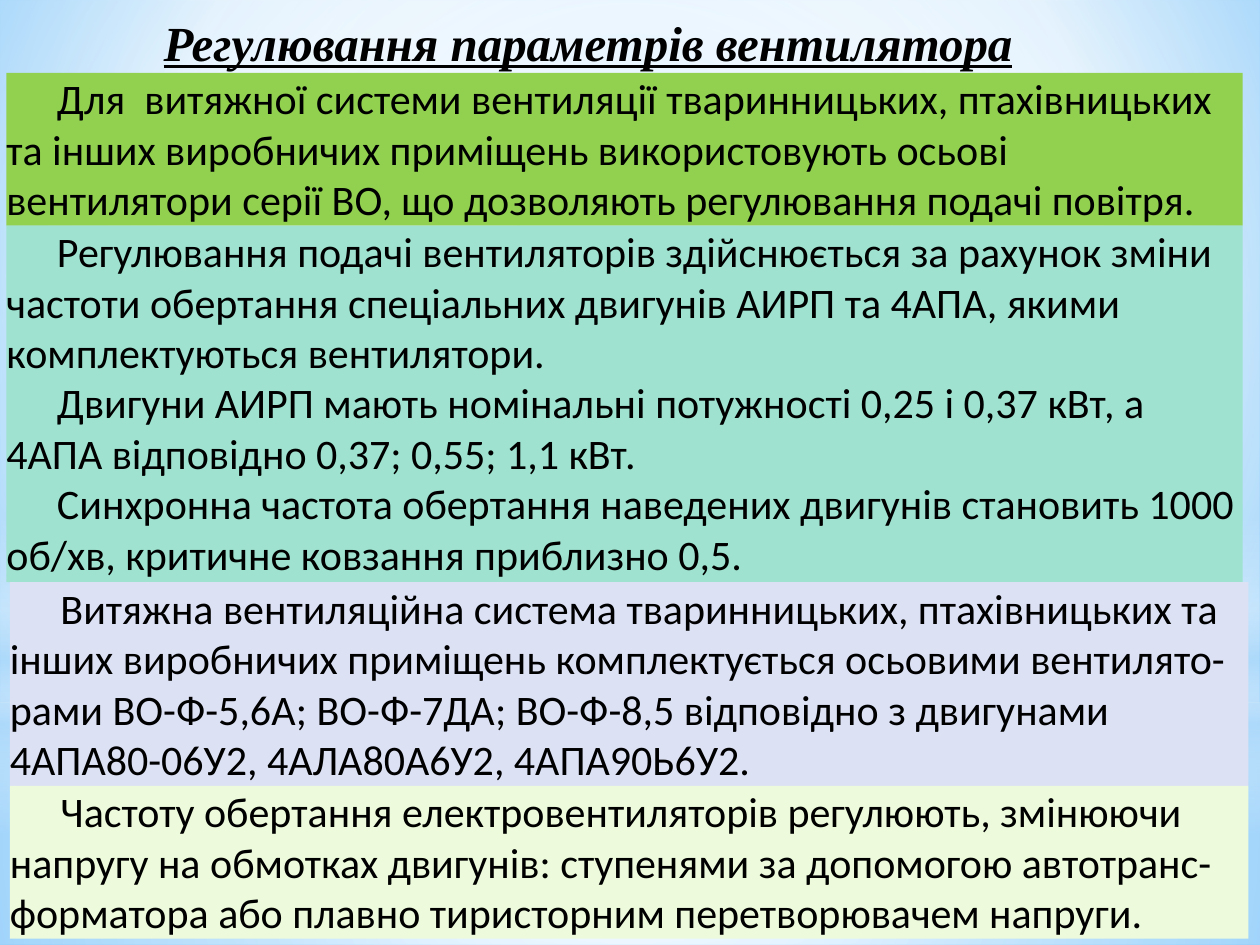
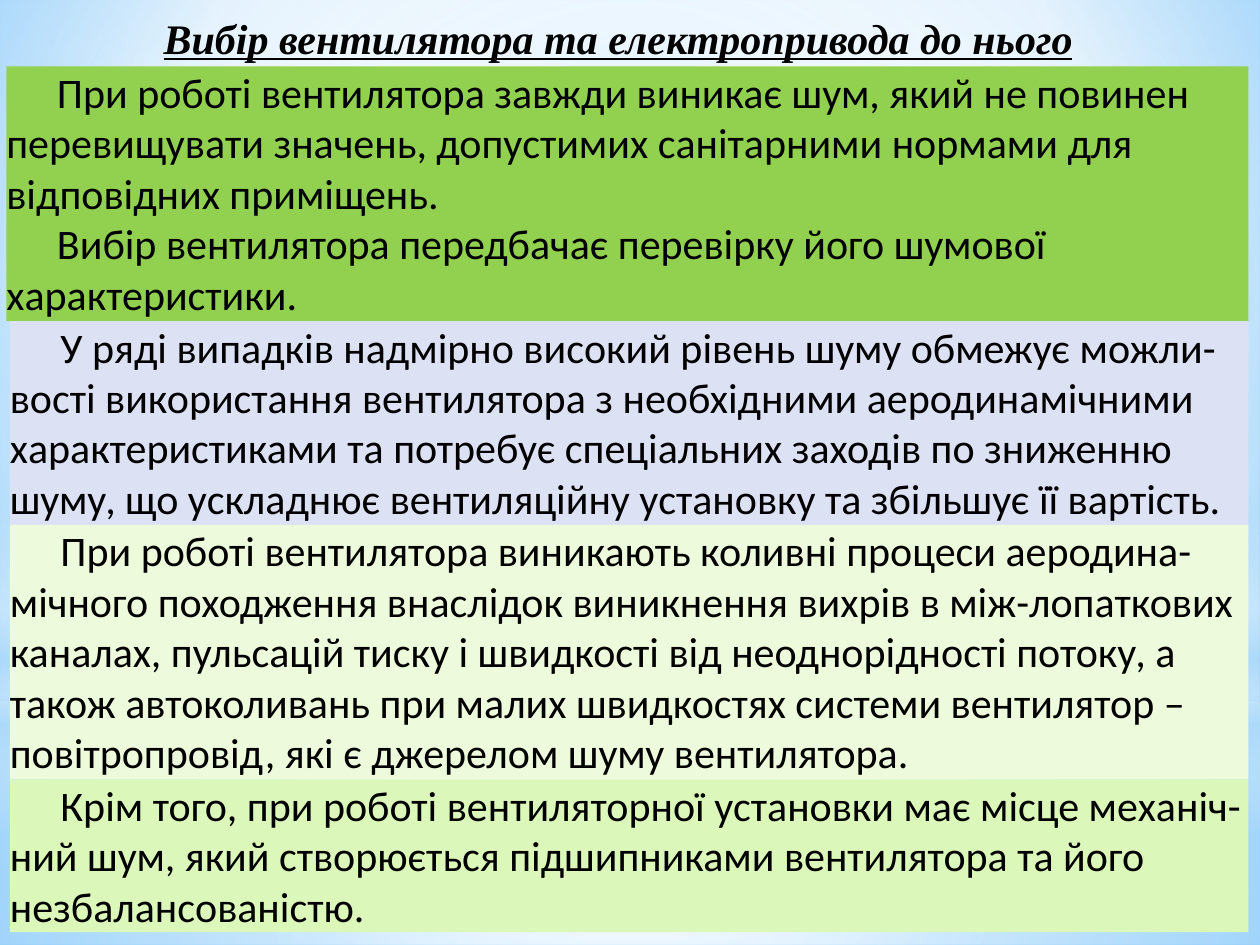
from lxml import etree
from pptx import Presentation
from pptx.dml.color import RGBColor
from pptx.enum import shapes, text
from pptx.oxml import ns
from pptx.util import Cm, Pt

WIDE, HIGH = Cm(25.4), Cm(19.05)
BLACK = RGBColor(0x00, 0x00, 0x00)
WHITE = RGBColor(0xFF, 0xFF, 0xFF)
SKY = RGBColor(0xB4, 0xDC, 0xFA)
AZURE = RGBColor(0x9E, 0xD5, 0xFF)
BLUE = RGBColor(0x5B, 0xB9, 0xFF)
GREEN = RGBColor(0x92, 0xD0, 0x50)
MINT = RGBColor(0x9E, 0xE2, 0xCF)
LILAC = RGBColor(0xDC, 0xE1, 0xF4)
CREAM = RGBColor(0xED, 0xFB, 0xDC)
LIME = RGBColor(0xDC, 0xF7, 0xBA)

# Block edges, first-line indent and the height of three text lines
NEAR, FAR = Cm(0.13), Cm(0.2)
INNER, OUTER = Cm(25.05), Cm(25.17)
INDENT = Cm(1.02)
THREE = Cm(3.08)

CENTER = (50, 50, 50, 50)


def blend(owner, stops, focus=None):
    """Replace a solid fill by a gradient of (place, colour, opacity)."""
    grad = etree.Element(ns.qn("a:gradFill"), rotWithShape="1")
    row = etree.SubElement(grad, ns.qn("a:gsLst"))
    for place, color, alpha in stops:
        stop = etree.SubElement(row, ns.qn("a:gs"), pos=str(place * 1000))
        tint = etree.SubElement(stop, ns.qn("a:srgbClr"), val=str(color))
        if alpha < 100:
            etree.SubElement(tint, ns.qn("a:alpha"), val=str(alpha * 1000))
    if focus:
        way = etree.SubElement(grad, ns.qn("a:path"))
        way.set("path", "circle")
        rect = etree.SubElement(way, ns.qn("a:fillToRect"))
        for side, share in zip("ltrb", focus):
            rect.set(side, str(share * 1000))
    else:
        etree.SubElement(grad, ns.qn("a:lin"), ang="5400000", scaled="0")
    old = owner.element.xpath(".//p:bgPr/a:solidFill | ./p:spPr/a:solidFill")[0]
    old.getparent().replace(old, grad)


def add_box(slide, kind, left, top, width, height, color):
    box = slide.shapes.add_shape(kind, left, top, width, height)
    box.shadow.inherit = False
    box.fill.solid()
    box.fill.fore_color.rgb = color
    box.line.fill.background()
    return box


def dress(layout, slide):
    """Give the layout its sky backdrop, using the slide to draw the glows."""
    for item in list(layout.placeholders):
        item.element.getparent().remove(item.element)
    layout.background.fill.solid()
    layout.background.fill.fore_color.rgb = WHITE
    blend(layout, [(0, AZURE, 100), (60, WHITE, 100), (100, BLUE, 100)],
          (20, 10, 20, 60))

    rect, oval = shapes.MSO_SHAPE.RECTANGLE, shapes.MSO_SHAPE.OVAL
    split = Cm(14.17)
    glows = [
        (rect, split, HIGH - split,
         [(0, WHITE, 91), (37, WHITE, 76), (100, SKY, 79)], CENTER),
        (rect, 0, split,
         [(0, WHITE, 89), (48, WHITE, 62), (100, SKY, 79)], CENTER),
        (rect, Cm(10.46), Cm(6.35),
         [(0, WHITE, 0), (29, WHITE, 30), (45, SKY, 40),
          (55, WHITE, 26), (65, SKY, 60), (100, WHITE, 0)], None),
        (oval, Cm(4.45), split,
         [(0, WHITE, 100), (56, WHITE, 0)], CENTER),
    ]
    for kind, top, height, stops, focus in glows:
        glow = add_box(slide, kind, 0, top, WIDE, height, WHITE)
        blend(glow, stops, focus)
        layout.shapes.element.append(glow.element)


def trim(frame, wrap):
    frame.margin_left = frame.margin_right = 0
    frame.margin_top = frame.margin_bottom = 0
    frame.word_wrap = wrap
    frame.auto_size = text.MSO_AUTO_SIZE.SHAPE_TO_FIT_TEXT


def style(para, name, size):
    para.font.name = name
    para.font.size = Pt(size)
    para.font.color.rgb = BLACK


def add_title(slide, words, size, width, height):
    box = slide.shapes.add_textbox(Cm(3.3), Cm(0.25), width, height)
    trim(box.text_frame, False)
    para = box.text_frame.paragraphs[0]
    para.text = words
    style(para, "Times New Roman", size)
    para.font.bold = para.font.italic = para.font.underline = True


def add_block(slide, left, right, top, lines, color, paras):
    """Draw a coloured text block and return its lower edge."""
    height = THREE * lines // 3
    box = add_box(slide, shapes.MSO_SHAPE.RECTANGLE,
                  left, top, right - left, height, color)
    frame = box.text_frame
    trim(frame, True)
    frame.vertical_anchor = text.MSO_ANCHOR.TOP
    frame.text = "\n".join(paras)
    for para in frame.paragraphs:
        para.alignment = text.PP_ALIGN.LEFT
        style(para, "Calibri", 24)
        props = para._p.get_or_add_pPr()
        props.set("marL", "0")
        props.set("indent", str(INDENT))
    return top + height


def add_stack(slide, top, blocks):
    for left, right, lines, color, paras in blocks:
        top = add_block(slide, left, right, top, lines, color, paras)


CONTROL = [
    (NEAR, INNER, 3, GREEN, [
        "Для  витяжної системи вентиляції тваринницьких, птахівницьких та "
        "інших виробничих приміщень використовують осьові вентилятори серії "
        "ВО, що дозволяють регулювання подачі повітря."]),
    (NEAR, INNER, 7, MINT, [
        "Регулювання подачі вентиляторів здійснюється за рахунок зміни "
        "частоти обертання спеціальних двигунів АИРП та 4АПА, якими "
        "комплектуються вентилятори.",
        "Двигуни АИРП мають номінальні потужності 0,25 і 0,37 кВт, а 4АПА "
        "відповідно 0,37; 0,55; 1,1 кВт.",
        "Синхронна частота обертання наведених двигунів становить 1000 "
        "об/хв, критичне ковзання приблизно 0,5."]),
    (FAR, OUTER, 4, LILAC, [
        "Витяжна вентиляційна система тваринницьких, птахівницьких та інших "
        "виробничих приміщень комплектується осьовими вентилято-рами "
        "ВО-Ф-5,6А; ВО-Ф-7ДА; ВО-Ф-8,5 відповідно з двигунами 4АПА80-06У2, "
        "4АЛА80А6У2, 4АПА90Ь6У2."]),
    (FAR, OUTER, 3, CREAM, [
        "Частоту обертання електровентиляторів регулюють, змінюючи напругу "
        "на обмотках двигунів: ступенями за допомогою автотранс-форматора "
        "або плавно тиристорним перетворювачем напруги."]),
]

CHOICE = [
    (NEAR, OUTER, 5, GREEN, [
        "При роботі вентилятора завжди виникає шум, який не повинен "
        "перевищувати значень, допустимих санітарними нормами для "
        "відповідних приміщень.",
        "Вибір вентилятора передбачає перевірку його шумової "
        "характеристики."]),
    (FAR, OUTER, 4, LILAC, [
        "У ряді випадків надмірно високий рівень шуму обмежує можли-вості "
        "використання вентилятора з необхідними аеродинамічними "
        "характеристиками та потребує спеціальних заходів по зниженню шуму, "
        "що ускладнює вентиляційну установку та збільшує її вартість."]),
    (FAR, OUTER, 5, CREAM, [
        "При роботі вентилятора виникають коливні процеси аеродина-мічного "
        "походження внаслідок виникнення вихрів в між-лопаткових каналах, "
        "пульсацій тиску і швидкості від неоднорідності потоку, а також "
        "автоколивань при малих швидкостях системи вентилятор – "
        "повітропровід, які є джерелом шуму вентилятора."]),
    (FAR, OUTER, 3, LIME, [
        "Крім того, при роботі вентиляторної установки має місце механіч-ний "
        "шум, який створюється підшипниками вентилятора та його "
        "незбалансованістю."]),
]


def main():
    deck = Presentation()
    deck.slide_width, deck.slide_height = WIDE, HIGH
    blank = deck.slide_layouts[6]

    # Fan control
    slide = deck.slides.add_slide(blank)
    dress(blank, slide)
    add_title(slide, "Регулювання параметрів вентилятора", 28,
              Cm(17.37), Cm(1.19))
    add_stack(slide, Cm(1.47), CONTROL)

    # Fan choice
    slide = deck.slides.add_slide(blank)
    add_title(slide, "Вибір вентилятора та електропривода до нього", 24,
              Cm(18.52), Cm(1.02))
    add_stack(slide, Cm(1.34), CHOICE)

    deck.save("out.pptx")


if __name__ == "__main__":
    main()
